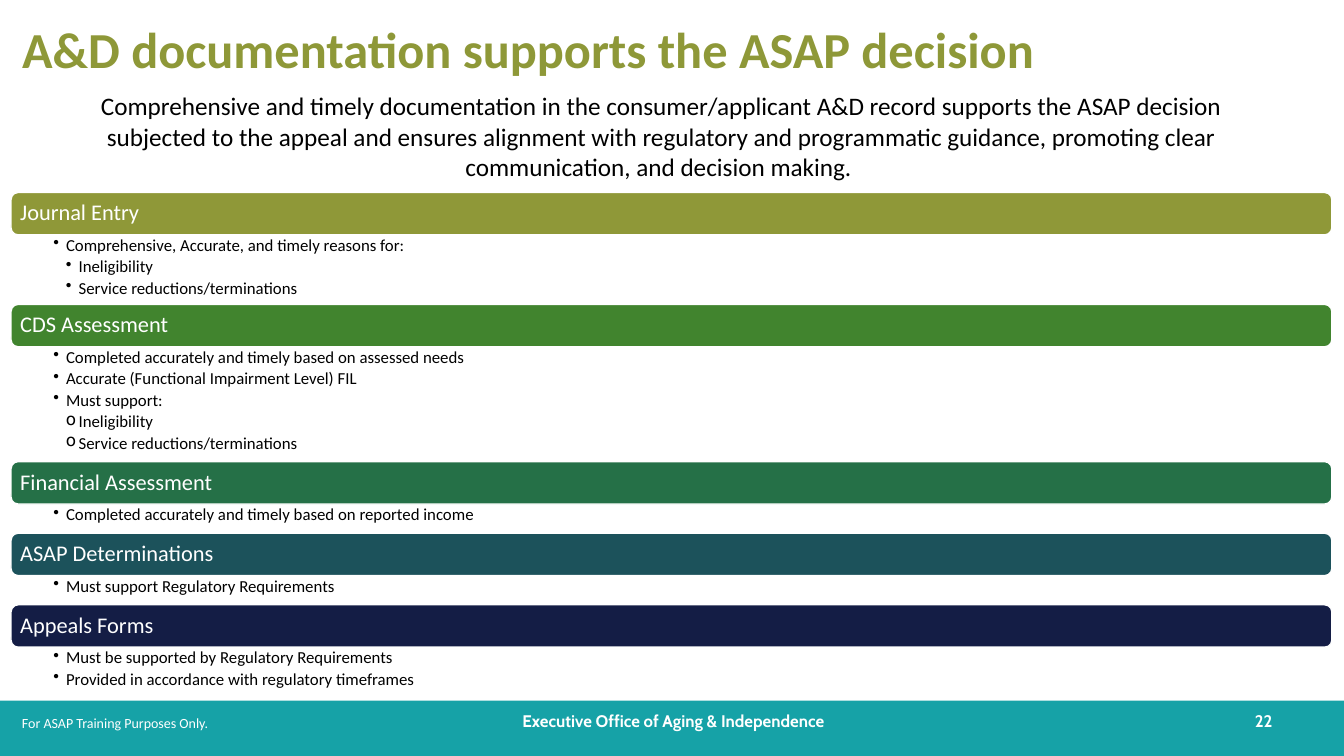
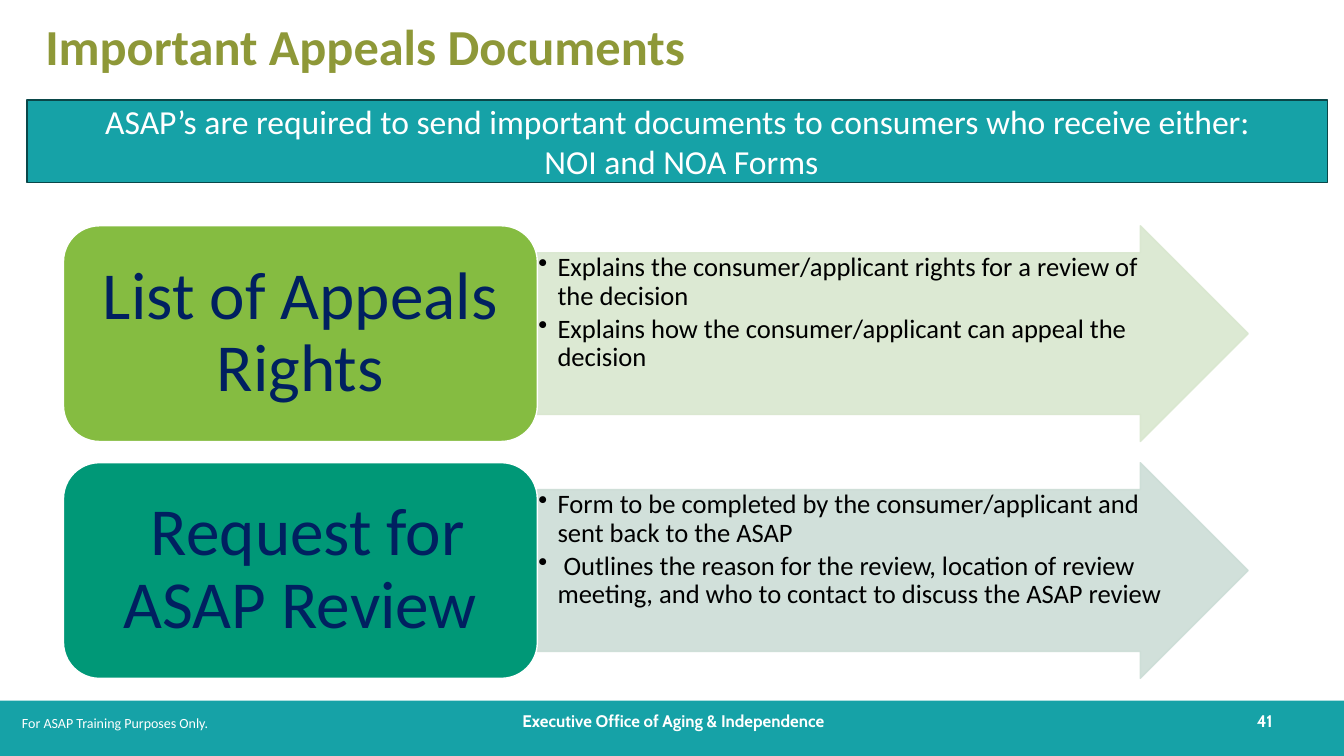
"""Build two training slides on appeals documentation."""
from lxml import etree
from pptx import Presentation
from pptx import util as u
from pptx.dml.color import RGBColor
from pptx.enum import shapes, text
from pptx.oxml import ns

WHITE = RGBColor(0xFF, 0xFF, 0xFF)
BLACK = RGBColor(0, 0, 0)
TEAL = RGBColor(0x16, 0xA2, 0xA7)
DARK_TEAL = RGBColor(0x0A, 0x47, 0x49)
OLIVE = RGBColor(0x8E, 0x98, 0x38)
NAVY = RGBColor(0x00, 0x20, 0x60)
WIDTH, HEIGHT, FOOTER_TOP = 13.33, 7.5, 6.95
RECT = shapes.MSO_SHAPE.RECTANGLE
ROUND = shapes.MSO_SHAPE.ROUNDED_RECTANGLE
ARROW = shapes.MSO_SHAPE.RIGHT_ARROW
MIDDLE, TOP = text.MSO_ANCHOR.MIDDLE, text.MSO_ANCHOR.TOP
LEFT, CENTER, RIGHT = text.PP_ALIGN.LEFT, text.PP_ALIGN.CENTER, text.PP_ALIGN.RIGHT

OWNER = "Executive Office of Aging & Independence"
NOTICE = "For ASAP Training Purposes Only."
SUMMARY = ("Comprehensive and timely documentation in the consumer/applicant A&D record "
           "supports the ASAP decision subjected to the appeal and ensures alignment with "
           "regulatory and programmatic guidance, promoting clear communication, and "
           "decision making. ")
SECTIONS = [
    ("Journal Entry", RGBColor(0x8F, 0x98, 0x38), 0.69, [
        ("•", 1, "Comprehensive, Accurate, and timely reasons for:"),
        ("•", 2, "Ineligibility"),
        ("•", 2, "Service reductions/terminations")]),
    ("CDS Assessment", RGBColor(0x41, 0x84, 0x2E), 1.14, [
        ("•", 1, "Completed accurately and timely based on assessed needs"),
        ("•", 1, "Accurate (Functional Impairment Level) FIL"),
        ("•", 1, "Must support:"),
        ("o", 2, "Ineligibility"),
        ("o", 2, "Service reductions/terminations")]),
    ("Financial Assessment", RGBColor(0x25, 0x70, 0x47), 0.29, [
        ("•", 1, "Completed accurately and timely based on reported income")]),
    ("ASAP Determinations", RGBColor(0x1C, 0x52, 0x5B), 0.29, [
        ("•", 1, "Must support Regulatory Requirements")]),
    ("Appeals Forms", RGBColor(0x14, 0x1D, 0x45), 0.45, [
        ("•", 1, "Must be supported by Regulatory Requirements"),
        ("•", 1, "Provided in accordance with regulatory timeframes")]),
]
BANNER = ["ASAP’s are required to send important documents to consumers who receive either:",
          " NOI and NOA Forms"]
DOCUMENTS = [
    ("List of Appeals Rights", RGBColor(0x85, 0xBC, 0x41), RGBColor(0xD9, 0xE7, 0xCF), [
        ("•", 1, "Explains the consumer/applicant rights for a review of the decision"),
        ("•", 1, "Explains how the consumer/applicant can appeal the decision")]),
    (" Request for ASAP Review", RGBColor(0x00, 0x98, 0x77), RGBColor(0xCC, 0xDD, 0xD6), [
        ("•", 1, "Form to be completed by the consumer/applicant and sent back to the ASAP"),
        ("•", 1, " Outlines the reason for the review, location of review meeting, "
                 "and who to contact to discuss the ASAP review")]),
]


def add_bullet(p, mark, level, indent):
    p.level = level
    pPr = p._p.get_or_add_pPr()
    pPr.set("marL", str(u.Inches(indent * level)))
    pPr.set("indent", str(-u.Inches(indent)))
    etree.SubElement(pPr, ns.qn("a:buChar")).set("char", mark)


def write(sp, paras, size, color, font="Calibri", bold=False, align=LEFT, anchor=MIDDLE,
          insets=(0.1, 0.05, 0.1, 0.05), spacing=None, gap=0, indent=0):
    tf = sp.text_frame
    tf.word_wrap = True
    tf.vertical_anchor = anchor
    for side, inset in zip(("left", "top", "right", "bottom"), insets):
        setattr(tf, "margin_" + side, u.Inches(inset))
    for i, para in enumerate(paras):
        p = tf.add_paragraph() if i else tf.paragraphs[0]
        words = para
        if indent:
            mark, level, words = para
            add_bullet(p, mark, level, indent)
        for name, value in dict(alignment=align, line_spacing=spacing,
                                space_after=u.Pt(gap * size)).items():
            setattr(p, name, value)
        r = p.add_run()
        r.text = words
        for name, value in dict(name=font, size=u.Pt(size), bold=bold).items():
            setattr(r.font, name, value)
        r.font.color.rgb = color


def add_text(s, at, paras, size, color, **fmt):
    write(s.shapes.add_textbox(*map(u.Inches, at)), paras, size, color, **fmt)


def add_block(s, kind, at, fill, line=None, opacity=None):
    sp = s.shapes.add_shape(kind, *map(u.Inches, at))
    sp.shadow.inherit = False
    sp.fill.solid()
    sp.fill.fore_color.rgb = fill
    if line is None:
        sp.line.fill.background()
    else:
        sp.line.color.rgb = line
        sp.line.width = u.Pt(1)
    if opacity:
        for clr in sp._element.spPr.iter(ns.qn("a:srgbClr")):
            etree.SubElement(clr, ns.qn("a:alpha")).set("val", str(opacity * 1000))
    return sp


def add_slide(prs, title, at, number):
    s = prs.slides.add_slide(prs.slide_layouts[6])
    add_block(s, RECT, (0, FOOTER_TOP, WIDTH, HEIGHT - FOOTER_TOP), TEAL)
    label = dict(font="Cabin", bold=True)
    add_text(s, (4.43, FOOTER_TOP, 4.5, 0.4), [OWNER], 12, WHITE, align=CENTER, **label)
    add_text(s, (12.21, FOOTER_TOP, 0.51, 0.4), [number], 12, WHITE, align=RIGHT, **label)
    add_text(s, (0.12, 7.04, 3.67, 0.27), [NOTICE], 10, WHITE, anchor=TOP)
    add_text(s, at, [title], 36, OLIVE, bold=True, insets=(0, 0, 0, 0))
    return s


def add_sections(s):
    left, top, width, band = 0.11, 1.91, 13.1, 0.42
    for heading, fill, height, points in SECTIONS:
        sp = add_block(s, ROUND, (left, top, width, band), fill, WHITE)
        write(sp, [heading], 16, WHITE, insets=(0.07,) * 4, spacing=0.9)
        add_text(s, (left, top + band, width, height), points, 12, BLACK, anchor=TOP,
                 insets=(0.42, 0.02, 0.12, 0.02), spacing=0.9, gap=0.2, indent=0.125)
        top += band + height


def add_documents(s):
    left, top, height, pitch = 0.63, 2.24, 2.14, 2.35
    name_width, arrow_width, text_width = 4.7, 7.05, 6.25
    shaft = 0.75
    for row, (name, fill, tint, points) in enumerate(DOCUMENTS):
        y, x = top + row * pitch, left + name_width
        sp = add_block(s, ARROW, (x, y, arrow_width, height), tint, tint, 90)
        sp.adjustments[0], sp.adjustments[1] = shaft, 0.5
        add_text(s, (x, y + height * (1 - shaft) / 2, text_width, height * shaft), points,
                 19, BLACK, anchor=TOP, insets=(0.01,) * 4, spacing=0.9, gap=0.15, indent=0.19)
        sp = add_block(s, ROUND, (left, y, name_width, height), fill, WHITE)
        write(sp, [name], 48, NAVY, align=CENTER, insets=(0.2, 0.1, 0.2, 0.1), spacing=0.9)


def main():
    prs = Presentation()
    prs.slide_width, prs.slide_height = u.Inches(WIDTH), u.Inches(HEIGHT)

    s = add_slide(prs, "A&D documentation supports the ASAP decision",
                  (0.22, 0.26, 12.86, 0.44), "22")
    add_sections(s)
    add_text(s, (0.64, 0.85, 11.84, 1.31), [SUMMARY], 18, BLACK, align=CENTER, anchor=TOP)

    s = add_slide(prs, "Important Appeals Documents", (0.45, 0.23, 12.1, 0.44), "41")
    add_documents(s)
    sp = add_block(s, RECT, (0.27, 0.99, 12.9, 0.82), TEAL, DARK_TEAL)
    write(sp, BANNER, 24, WHITE, align=CENTER)

    prs.save("out.pptx")


if __name__ == "__main__":
    main()
